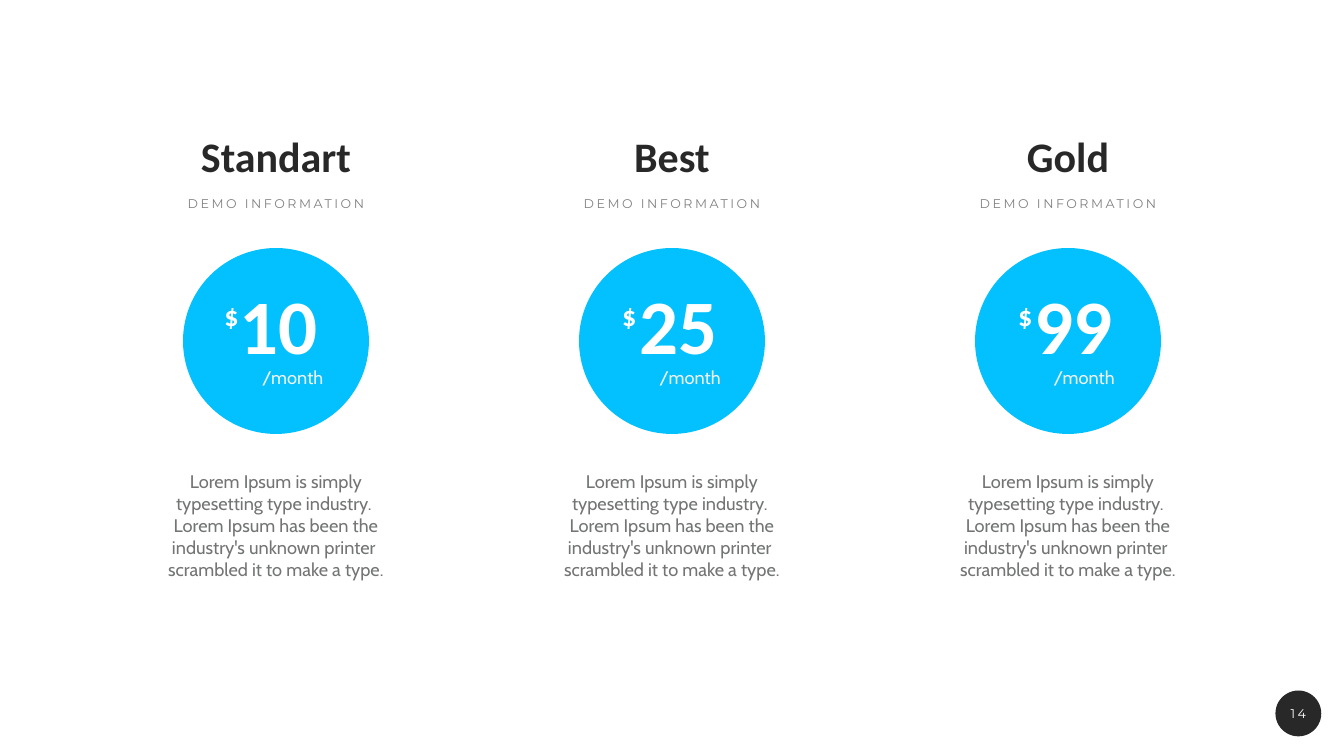
from dataclasses import dataclass

from pptx import Presentation
from pptx.dml.color import RGBColor
from pptx.enum.shapes import MSO_SHAPE
from pptx.enum.text import MSO_ANCHOR, MSO_AUTO_SIZE, PP_ALIGN
from pptx.shapes.autoshape import Shape
from pptx.util import Cm, Pt


@dataclass(frozen=True)
class Style:
    font: str
    size: int
    color: str
    bold: bool = False
    track: int = 0
    lead: float = 1.0


@dataclass(frozen=True)
class Theme:
    accent: str = "03C0FE"
    dark: str = "282828"
    title: Style = Style("Calibri", 60, "282828", True, lead=0.9)
    label: Style = Style("Montserrat", 18, "818181", track=360)
    price: Style = Style("Calibri", 110, "FFFFFF", True, lead=0.9)
    sign: Style = Style("Calibri", 40, "FFFFFF", True, lead=0.9)
    term: Style = Style("Cabin", 26, "F3F3F3")
    body: Style = Style("Cabin", 26, "727574")
    page: Style = Style("Montserrat", 18, "FFFFFF", track=360)


@dataclass(frozen=True)
class Box:
    mid: float
    top: float
    width: float
    height: float

    def place(self) -> tuple[Cm, Cm, Cm, Cm]:
        left = self.mid - self.width / 2
        return Cm(left), Cm(self.top), Cm(self.width), Cm(self.height)


@dataclass(frozen=True)
class Plan:
    name: str
    price: str
    align: PP_ALIGN
    price_dx: float
    sign_dx: float
    term_dx: float


THEME = Theme()
FIRST, PITCH = 13.91, 19.96
BODY = (
    "Lorem Ipsum is simply typesetting type industry. ",
    "Lorem Ipsum has been the industry's unknown printer ",
    "scrambled it to make a type.",
)
PLANS = (
    Plan("Standart", "10", PP_ALIGN.CENTER, 0.14, -2.24, 1.03),
    Plan("Best", "25", PP_ALIGN.RIGHT, 0.22, -2.16, 1.1),
    Plan("Gold", "99", PP_ALIGN.LEFT, 0.39, -2.16, 1.0),
)


def apply(target: object, values: dict[str, object]) -> None:
    for key, value in values.items():
        setattr(target, key, value)


def add_disc(shapes, box: Box, color: str) -> Shape:
    disc = shapes.add_shape(MSO_SHAPE.OVAL, *box.place())
    disc.shadow.inherit = False
    disc.fill.solid()
    disc.fill.fore_color.rgb = RGBColor.from_string(color)
    disc.line.fill.background()
    return disc


def add_text(shapes, box: Box, lines: tuple[str, ...], style: Style,
             align: PP_ALIGN = PP_ALIGN.CENTER, wrap: bool = True,
             anchor: MSO_ANCHOR = MSO_ANCHOR.MIDDLE, grow: bool = True) -> Shape:
    shape = shapes.add_textbox(*box.place())
    frame = shape.text_frame
    sides = ("left", "right", "top", "bottom")
    apply(frame, {f"margin_{side}": Cm(0.1) for side in sides})
    apply(frame, {
        "word_wrap": wrap,
        "vertical_anchor": anchor,
        "auto_size": MSO_AUTO_SIZE.SHAPE_TO_FIT_TEXT if grow else MSO_AUTO_SIZE.NONE,
    })
    frame.text = "\n".join(lines)
    for para in frame.paragraphs:
        apply(para, {"alignment": align, "line_spacing": style.lead})
        for run in para.runs:
            apply(run.font, {"name": style.font, "size": Pt(style.size), "bold": style.bold})
            run.font.color.rgb = RGBColor.from_string(style.color)
            if style.track:
                run._r.get_or_add_rPr().set("spc", str(style.track))
    return shape


def add_price(shapes, plan: Plan, mid: float) -> None:
    group = shapes.add_group_shape().shapes
    add_text(group, Box(mid + plan.price_dx, 14.12, 4.37, 4.98), (plan.price,),
             THEME.price, plan.align, wrap=False)
    add_text(group, Box(mid + plan.sign_dx, 14.99, 2.31, 1.98), ("$",), THEME.sign)
    add_text(group, Box(mid + plan.term_dx, 18.36, 3.66, 1.27), ("/month",),
             THEME.term, PP_ALIGN.LEFT)


def add_plan(shapes, plan: Plan, mid: float) -> None:
    add_disc(shapes, Box(mid, 12.5, 9.37, 9.37), THEME.accent)
    add_text(shapes, Box(mid, 23.62, 12.19, 8.74), BODY, THEME.body,
             anchor=MSO_ANCHOR.TOP, grow=False)
    add_text(shapes, Box(mid, 6.58, 15.11, 2.82), (plan.name,), THEME.title)
    add_text(shapes, Box(mid, 9.75, 9.35, 0.99), ("DEMO INFORMATION",),
             THEME.label, wrap=False)
    add_price(shapes, plan, mid)


def main() -> None:
    deck = Presentation()
    apply(deck, {"slide_width": Cm(67.74), "slide_height": Cm(38.1)})
    shapes = deck.slides.add_slide(deck.slide_layouts[6]).shapes
    add_disc(shapes, Box(65.44, 34.8, 2.31, 2.31), THEME.dark)
    for index, plan in enumerate(PLANS):
        add_plan(shapes, plan, FIRST + index * PITCH)
    add_text(shapes, Box(65.44, 35.46, 1.68, 0.99), ("14",), THEME.page,
             anchor=MSO_ANCHOR.TOP)
    deck.save("out.pptx")


if __name__ == "__main__":
    main()
